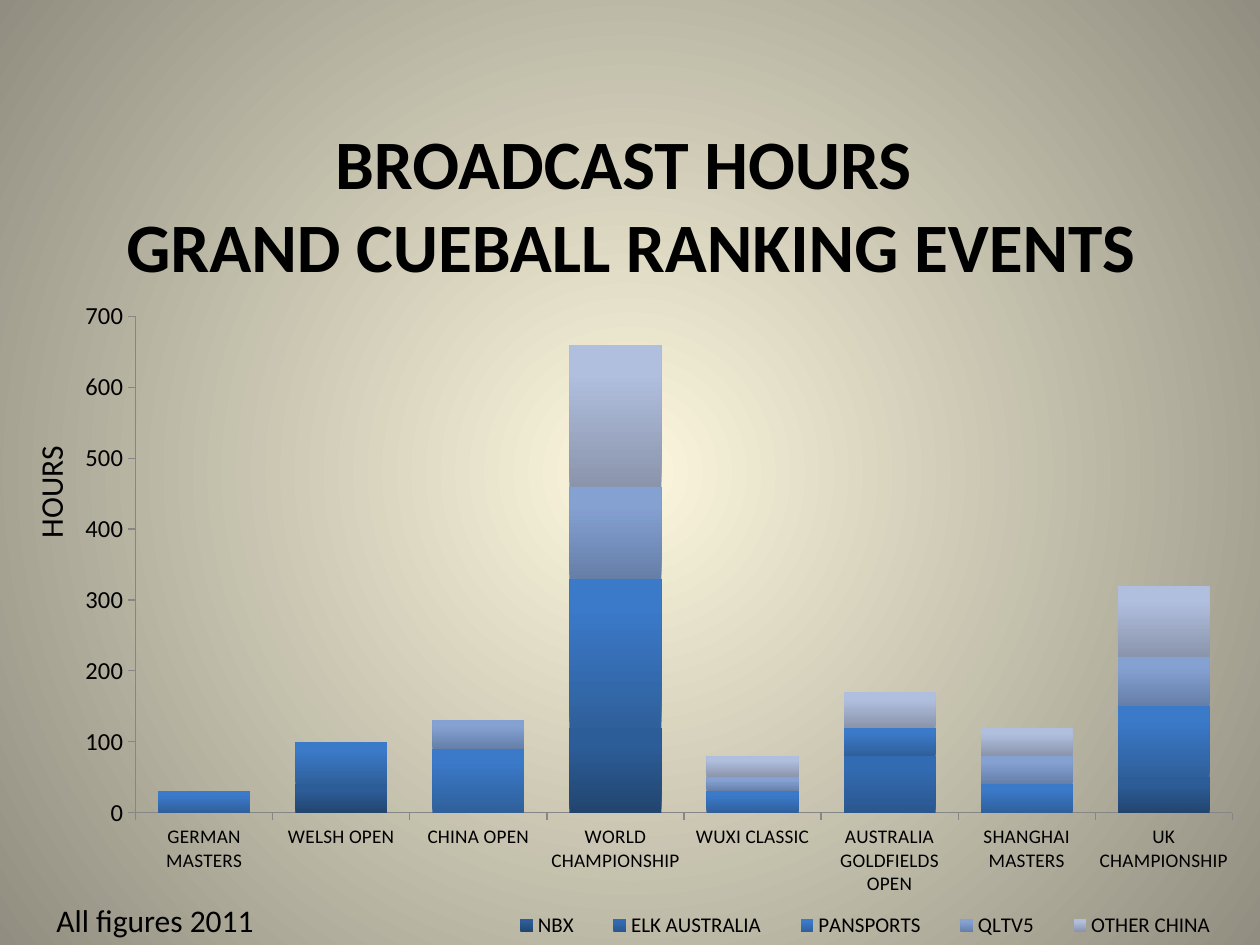
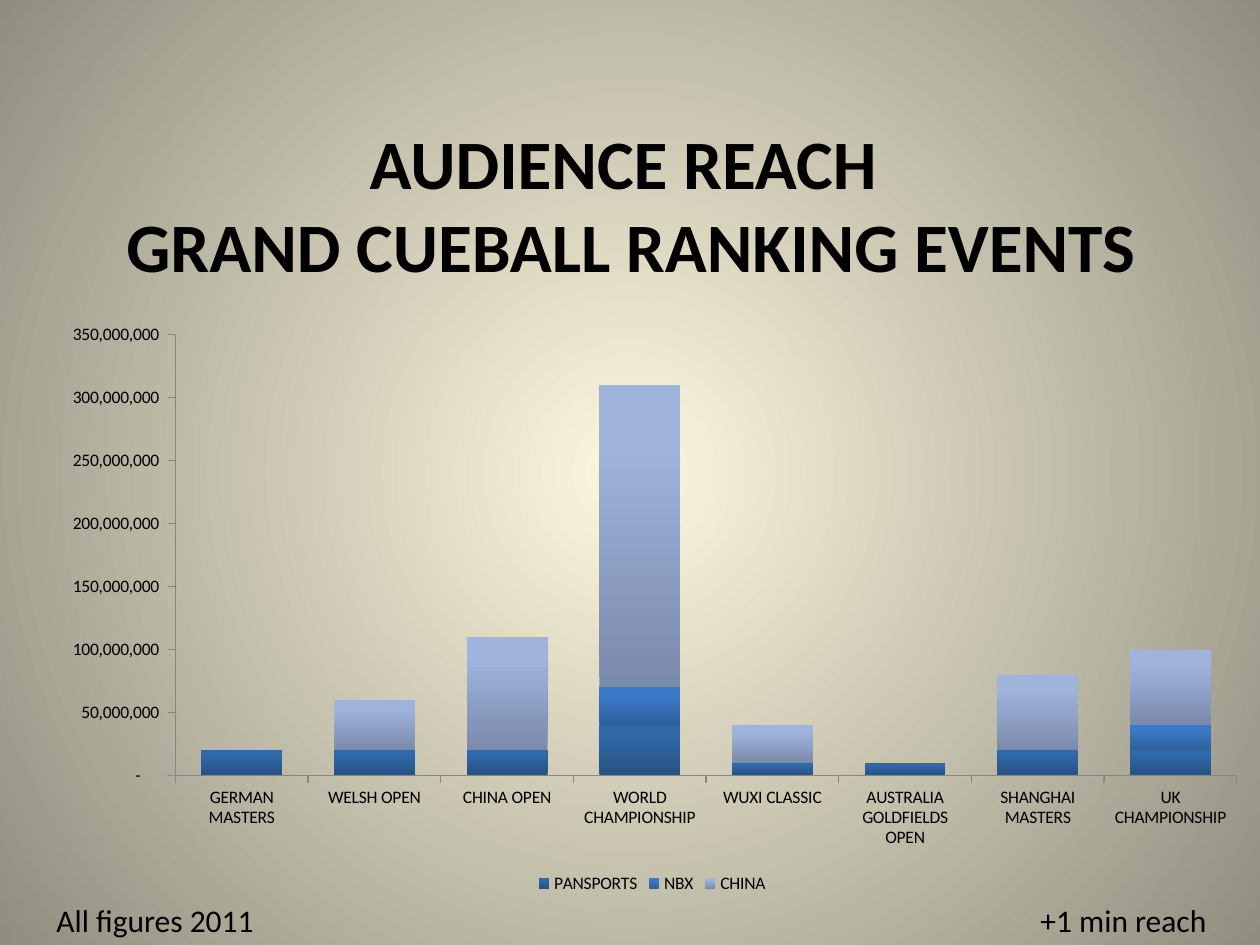
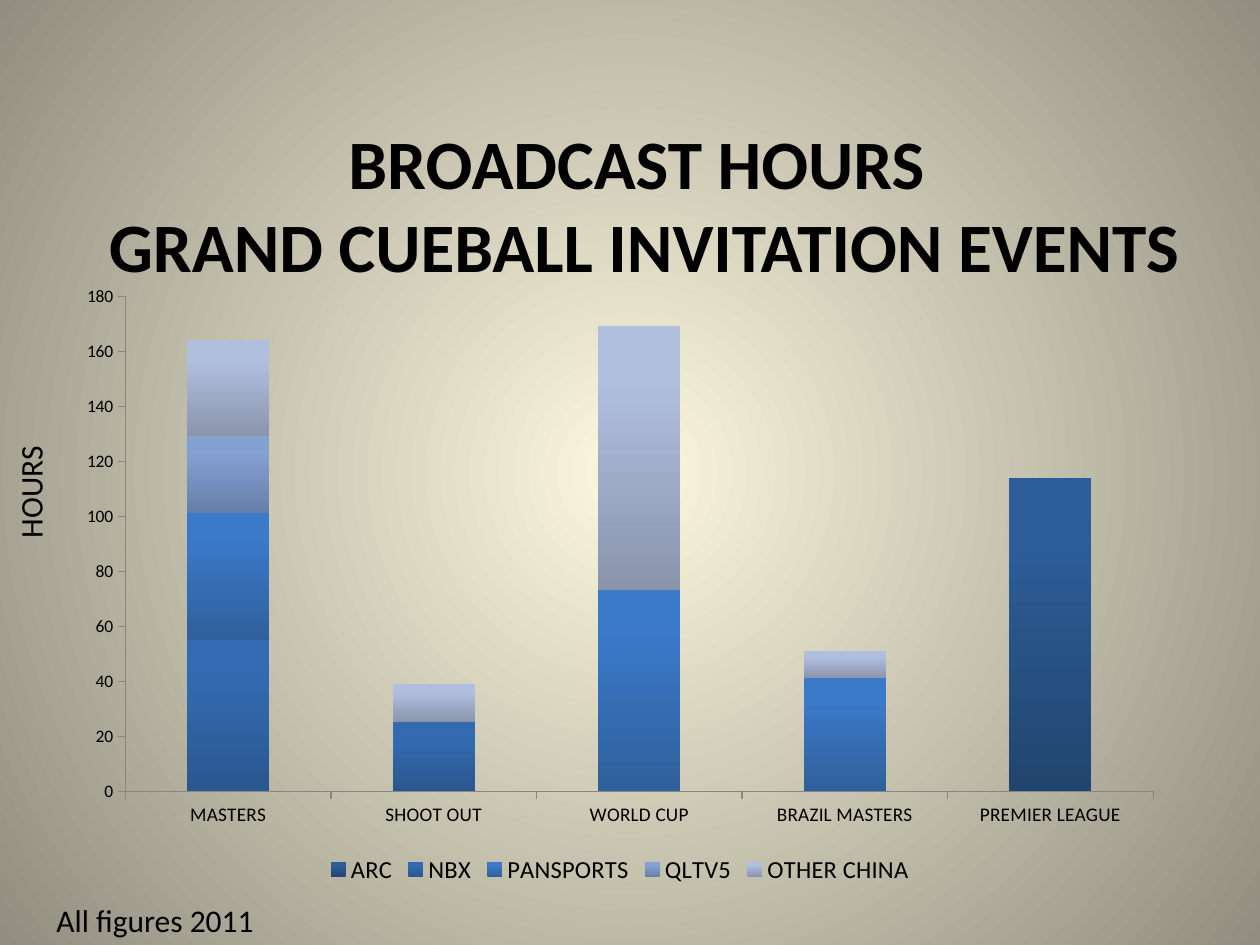
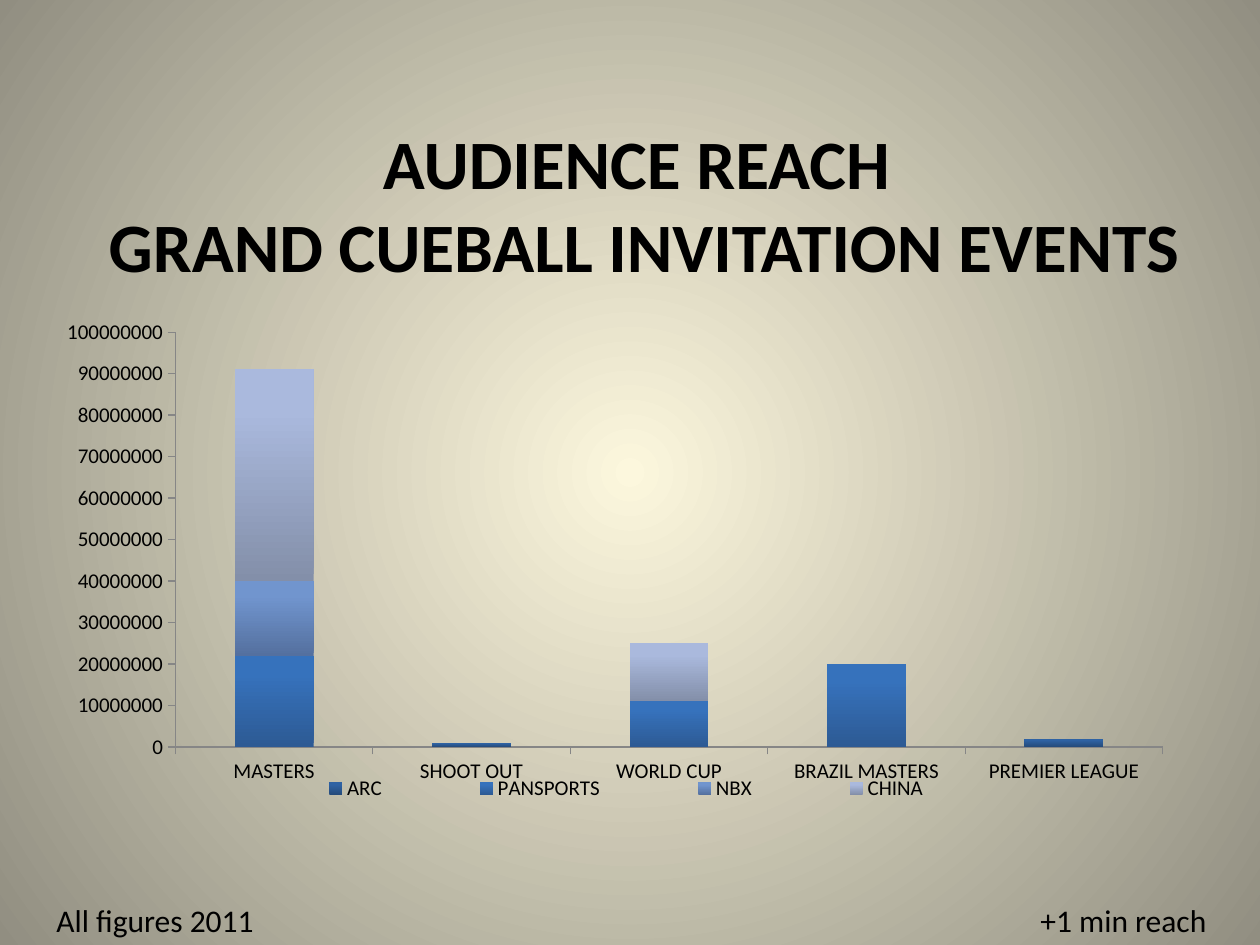
from dataclasses import dataclass

from lxml.etree import SubElement
from pptx import Presentation
from pptx.chart.data import CategoryChartData as ChartData
from pptx.dml.color import RGBColor as Color
from pptx.enum.chart import XL_CHART_TYPE as ChartKind
from pptx.enum.chart import XL_LEGEND_POSITION as LegendSide
from pptx.enum.chart import XL_TICK_MARK as Tick
from pptx.enum.text import MSO_ANCHOR as Anchor
from pptx.enum.text import PP_ALIGN as Align
from pptx.oxml.ns import qn
from pptx.util import Pt


@dataclass(frozen=True)
class Theme:
    font: str = "Calibri"
    ink: str = "000000"
    axis: str = "868686"
    glow: str = "FCF7DD"
    rim: str = "918E81"
    title_size: float = 39.6
    note_size: float = 18


THEME = Theme()

NAVY = ("22456F", "2C5D98")
DEEP = ("2A578F", "336BB2")
BLUE = ("2F609B", "3B79C9")
MIST = ("667FA9", "85A1D2")
PALE = ("8A95AC", "B1BFDF")
PALETTES = {
    3: [("27517F", "3068AA"), BLUE, ("7B8AAB", "9FB3DB")],
    4: [("254B7B", "2E62A3"), ("2D5A94", "3672BC"), ("54709F", "7195CE"), ("838FA9", "AAB9DD")],
    5: [NAVY, DEEP, BLUE, MIST, PALE],
}

RANKING_EVENTS = [
    "GERMAN MASTERS", "WELSH OPEN", "CHINA OPEN", "WORLD CHAMPIONSHIP",
    "WUXI CLASSIC", "AUSTRALIA GOLDFIELDS OPEN", "SHANGHAI MASTERS", "UK CHAMPIONSHIP",
]
INVITATION_EVENTS = ["MASTERS", "SHOOT OUT", "WORLD CUP", "BRAZIL MASTERS", "PREMIER LEAGUE"]

MILLION = 1_000_000
ACCOUNTING = '_-* #,##0_-;\\-* #,##0_-;_-* "-"??_-;_-@_'

YEAR_NOTE = ("All figures 2011", (25.2, 511.2, 132.5, 28.8), 0)
REACH_NOTE = ("+1 min reach", (587.5, 511.2, 110.9, 28.8), 0)


def hours_note(left):
    return "HOURS", (left, 266.4, 67.7, 28.8), 270


SLIDES = [
    {
        "title": "BROADCAST HOURS \vGRAND CUEBALL RANKING EVENTS",
        "title_at": (36.7, 71.3, 648, 90),
        "notes": [YEAR_NOTE, hours_note(-5)],
        "chart_at": (42.5, 167.8, 674.6, 372.2),
        "plot": (5.2, 3.5, 92.9, 76.2),
        "legend": (35, 94.5, 64, 5),
        "events": RANKING_EVENTS,
        "unit": 1,
        "series": {
            "NBX": [None, 40, None, 120, None, None, None, 50],
            "ELK AUSTRALIA": [None, None, None, None, None, 80, None, None],
            "PANSPORTS": [30, 60, 90, 210, 30, 40, 40, 100],
            "QLTV5": [None, 0, 40, 130, 20, None, 40, 70],
            "OTHER CHINA": [None, None, None, 200, 30, 50, 40, 100],
        },
        "gap": 49, "top": 700, "step": 100, "format": "0",
        "sizes": (11, 14, 12),
    },
    {
        "title": "AUDIENCE REACH \vGRAND CUEBALL RANKING EVENTS",
        "title_at": (36.7, 71.3, 648, 90),
        "notes": [YEAR_NOTE, REACH_NOTE],
        "chart_at": (25.2, 179.3, 694.8, 334.1),
        "plot": (10.8, 3.6, 87.3, 75.4),
        "legend": None,
        "events": RANKING_EVENTS,
        "unit": MILLION,
        "series": {
            "PANSPORTS": [20, 20, 20, 40, 10, 10, 20, 20],
            "NBX": [None, 0, None, 30, None, None, None, 20],
            "CHINA": [None, 40, 90, 240, 30, 0, 60, 60],
        },
        "gap": 64, "top": 350, "step": 50, "format": ACCOUNTING,
        "sizes": (10, 10, 10),
    },
    {
        "title": "BROADCAST HOURS \vGRAND CUEBALL INVITATION EVENTS",
        "title_at": (31, 71.3, 674.6, 90),
        "notes": [YEAR_NOTE, hours_note(-16.6)],
        "chart_at": (36.7, 157, 635, 351.4),
        "plot": (5.5, 3.5, 92.5, 80.5),
        "legend": None,
        "events": INVITATION_EVENTS,
        "unit": 1,
        "series": {
            "ARC": [None, None, None, None, 114],
            "NBX": [55, 25, None, None, None],
            "PANSPORTS": [46, None, 73, 41, None],
            "QLTV5": [28, None, None, None, None],
            "OTHER CHINA": [35, 14, 96, 10, None],
        },
        "gap": 150, "top": 180, "step": 20, "format": "0",
        "sizes": (11, 10, 14),
    },
    {
        "title": "AUDIENCE REACH \vGRAND CUEBALL INVITATION EVENTS",
        "title_at": (36.7, 71.3, 663, 90),
        "notes": [YEAR_NOTE, REACH_NOTE],
        "chart_at": (25.2, 177.1, 652.3, 303.1),
        "plot": (11.5, 4.2, 86.5, 78.2),
        "legend": (17, 87, 68, 6.5),
        "events": INVITATION_EVENTS,
        "unit": MILLION,
        "series": {
            "ARC": [None, 1, None, None, 2],
            "PANSPORTS": [22, None, 11, 20, None],
            "NBX": [18, None, None, None, 0],
            "CHINA": [51, None, 14, None, None],
        },
        "gap": 150, "top": 100, "step": 10, "format": "0",
        "sizes": (12, 12, 12),
    },
]


def points(frame):
    return [Pt(length) for length in frame]


def style_font(font, size, bold=False):
    font.name = THEME.font
    font.size = Pt(size)
    font.bold = bold
    font.color.rgb = Color.from_string(THEME.ink)


def paint_gradient(fill, colours, end=1.0):
    fill.gradient()
    for stop, colour, position in zip(fill.gradient_stops, colours, (0, end)):
        stop.color.rgb = Color.from_string(colour)
        stop.position = position


def paint_background(page):
    paint_gradient(page.background.fill, (THEME.glow, THEME.rim))
    gradient = next(page.element.iter(qn("a:gradFill")))
    gradient.remove(gradient.find(qn("a:lin")))
    circle = SubElement(gradient, qn("a:path"), {"path": "circle"})
    SubElement(circle, qn("a:fillToRect"), {side: "50000" for side in "ltrb"})


def add_text(page, text, frame, size, rotation=0, title=False):
    box = page.shapes.add_textbox(*points(frame))
    box.rotation = rotation
    box.text_frame.word_wrap = title
    box.text_frame.vertical_anchor = Anchor.MIDDLE if title else Anchor.TOP
    para = box.text_frame.paragraphs[0]
    para.text = text
    para.alignment = Align.CENTER if title else Align.LEFT
    style_font(para.font, size, title)


def place_part(parent, index, percents, inner=False):
    for old in parent.findall(qn("c:layout")):
        parent.remove(old)
    layout = SubElement(parent, qn("c:layout"))
    parent.insert(index, layout)
    manual = SubElement(layout, qn("c:manualLayout"))
    if inner:
        SubElement(manual, qn("c:layoutTarget"), val="inner")
    for side in "xy":
        SubElement(manual, qn(f"c:{side}Mode"), val="edge")
    for side, percent in zip("xywh", percents):
        SubElement(manual, qn(f"c:{side}"), val=f"{percent / 100:.3f}")


def style_axis(axis, size):
    axis.has_major_gridlines = False
    axis.major_tick_mark = Tick.OUTSIDE
    axis.minor_tick_mark = Tick.NONE
    axis.format.line.color.rgb = Color.from_string(THEME.axis)
    axis.format.line.width = Pt(0.75)
    style_font(axis.tick_labels.font, size)


def add_hours_chart(page, content):
    unit = content["unit"]
    data = ChartData()
    data.categories = content["events"]
    for name, values in content["series"].items():
        data.add_series(name, [None if value is None else value * unit for value in values])
    chart = page.shapes.add_chart(
        ChartKind.COLUMN_STACKED, *points(content["chart_at"]), data).chart
    category_size, value_size, legend_size = content["sizes"]
    style_font(chart.font, value_size)
    chart.has_title = False

    plot = chart.plots[0]
    plot.gap_width = content["gap"]
    plot.overlap = 100
    plot.vary_by_categories = False
    for series, colours in zip(plot.series, PALETTES[len(plot.series)]):
        paint_gradient(series.format.fill, colours, 0.8)
        series.format.fill.gradient_angle = 90

    style_axis(chart.category_axis, category_size)
    values = chart.value_axis
    style_axis(values, value_size)
    values.minimum_scale = 0
    values.maximum_scale = content["top"] * unit
    values.major_unit = content["step"] * unit
    values.tick_labels.number_format = content["format"]
    values.tick_labels.number_format_is_linked = False

    chart.has_legend = True
    chart.legend.position = LegendSide.BOTTOM
    chart.legend.include_in_layout = False
    style_font(chart.legend.font, legend_size)
    place_part(next(chart.element.iter(qn("c:plotArea"))), 0, content["plot"], True)
    if content["legend"]:
        place_part(next(chart.element.iter(qn("c:legend"))), 1, content["legend"])


def main():
    deck = Presentation()
    deck.slide_width, deck.slide_height = Pt(720), Pt(540)
    for content in SLIDES:
        page = deck.slides.add_slide(deck.slide_layouts[6])
        paint_background(page)
        add_text(page, content["title"], content["title_at"], THEME.title_size, title=True)
        add_hours_chart(page, content)
        for text, frame, rotation in content["notes"]:
            add_text(page, text, frame, THEME.note_size, rotation)
    deck.save("out.pptx")


if __name__ == "__main__":
    main()
